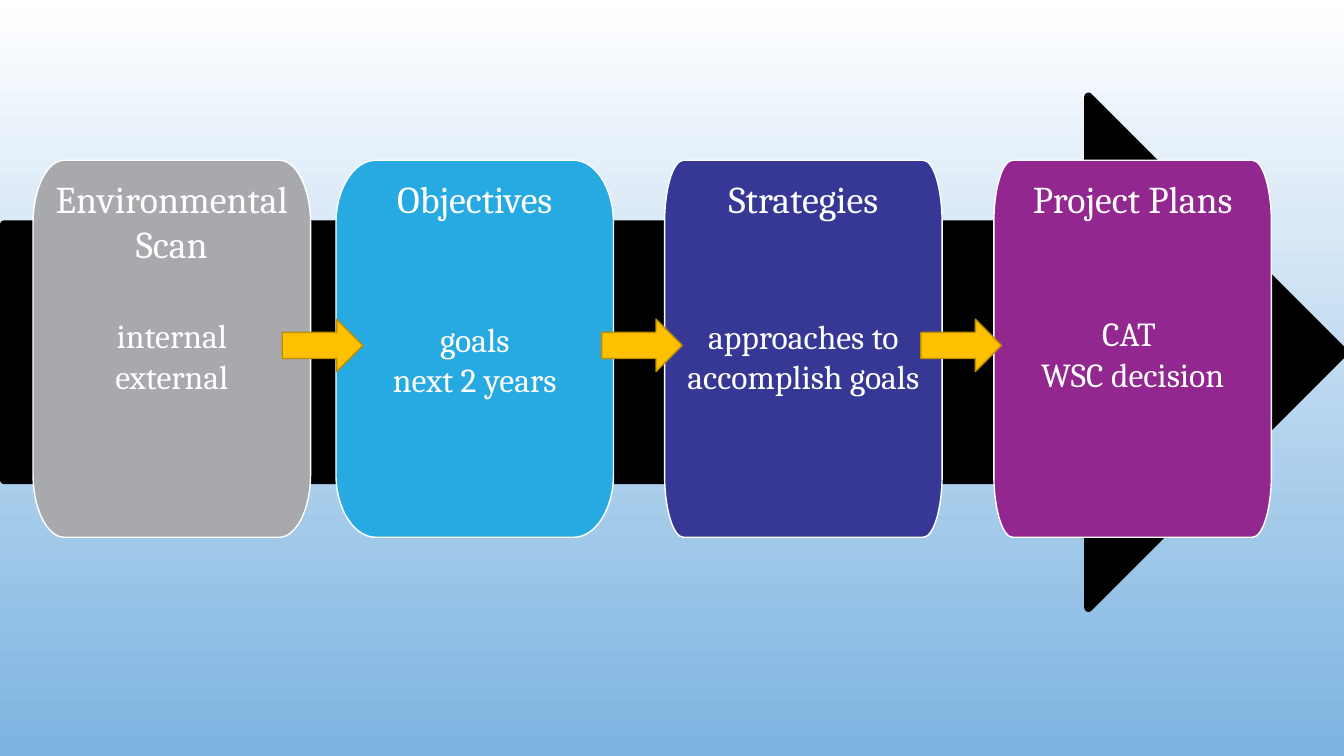
from dataclasses import dataclass

from lxml import etree
from pptx import Presentation
from pptx.dml.color import RGBColor
from pptx.enum.shapes import MSO_SHAPE
from pptx.enum.text import MSO_ANCHOR, PP_ALIGN
from pptx.oxml.ns import qn
from pptx.util import Inches, Pt

RIGHT_ARROW = MSO_SHAPE.RIGHT_ARROW
TOP = MSO_ANCHOR.TOP
CENTER = PP_ALIGN.CENTER
SLIDE_WIDTH = Inches(13.33)
SLIDE_HEIGHT = Inches(7.5)


@dataclass(frozen=True)
class Theme:
    font: str = "Cambria"
    heading_size: int = 27
    detail_size: int = 24
    text: str = "FFFFFF"
    sky_top: str = "FFFFFF"
    sky_bottom: str = "7CB3E1"
    band: str = "000000"
    step: str = "FFC000"
    step_edge: str = "BD8E00"
    card_edge: str = "FFFFFF"
    scan: str = "A7A9AC"
    objectives: str = "27AAE1"
    strategies: str = "373896"
    plans: str = "92278F"


THEME = Theme()

CARD_TOP, CARD_WIDTH, CARD_HEIGHT = 21.2, 20.65, 49.87
CORNER_HEIGHT = 8.3
CORNER_PULL = 0.55
STEP_LEFT, STEP_PITCH = 21, 23.76

STAGES = [
    (2.46, 2.33, THEME.scan, ["Environmental", "Scan"], 35, ["internal", "external"]),
    (25, 2.96, THEME.objectives, ["Objectives"], 70, ["goals", "next 2 years"]),
    (49.45, 1.41, THEME.strategies, ["Strategies"], 68, ["approaches to accomplish goals"]),
    (73.95, 1.41, THEME.plans, ["Project Plans"], 66, ["CAT ", "WSC decision"]),
]


def across(percent):
    return round(SLIDE_WIDTH * percent / 100)


def down(percent):
    return round(SLIDE_HEIGHT * percent / 100)


def paint(shape, fill, edge, edge_width):
    shape.shadow.inherit = False
    shape.fill.solid()
    shape.fill.fore_color.rgb = RGBColor.from_string(fill)
    shape.line.color.rgb = RGBColor.from_string(edge)
    shape.line.width = Pt(edge_width)


def paint_background(slide):
    sky = slide.background.fill
    sky.gradient()
    sky.gradient_angle = 270
    for stop, color in zip(sky.gradient_stops, (THEME.sky_top, THEME.sky_bottom)):
        stop.color.rgb = RGBColor.from_string(color)


def add_arrow(slide, left, top, width, height, fill, edge, edge_width):
    arrow = slide.shapes.add_shape(
        RIGHT_ARROW, across(left), down(top), across(width), down(height)
    )
    paint(arrow, fill, edge, edge_width)


def card_outline(left, corner_width):
    right, bottom = left + CARD_WIDTH, CARD_TOP + CARD_HEIGHT
    near_x, far_x = left + corner_width, right - corner_width
    near_y, far_y = CARD_TOP + CORNER_HEIGHT, bottom - CORNER_HEIGHT
    points = [
        (left, near_y), (near_x, CARD_TOP), (far_x, CARD_TOP), (right, near_y),
        (right, far_y), (far_x, bottom), (near_x, bottom), (left, far_y),
    ]
    return [(across(x), down(y)) for x, y in points]


def pull_toward(point, corner):
    return [round(a + CORNER_PULL * (b - a)) for a, b in zip(point, corner)]


def round_corners(card):
    ends = [(int(pt.get("x")), int(pt.get("y"))) for pt in card._element.iter(qn("a:pt"))]
    edges = list(card._element.iter(qn("a:lnTo")))
    corners = [(0, 0), (card.width, 0), (card.width, card.height), (0, card.height)]
    for index, corner in enumerate(corners):
        start, end = ends[2 * index], ends[2 * index + 1]
        edge = edges[2 * index]
        curve = etree.Element(qn("a:cubicBezTo"))
        for x, y in (pull_toward(start, corner), pull_toward(end, corner), end):
            etree.SubElement(curve, qn("a:pt"), x=str(x), y=str(y))
        edge.getparent().replace(edge, curve)


def write_line(paragraph, text, size, space_before=0):
    paragraph.alignment = CENTER
    paragraph.space_before = Pt(space_before)
    run = paragraph.add_run()
    run.text = text
    run.font.name = THEME.font
    run.font.size = Pt(size)
    run.font.color.rgb = RGBColor.from_string(THEME.text)


def add_card(slide, left, corner_width, color, heading, gap, details):
    start, *rest = card_outline(left, corner_width)
    outline = slide.shapes.build_freeform(*start, scale=1.0)
    outline.add_line_segments([*rest, start], close=True)
    card = outline.convert_to_shape()
    round_corners(card)
    paint(card, color, THEME.card_edge, 1)

    frame = card.text_frame
    frame.word_wrap = True
    frame.vertical_anchor = TOP
    frame.margin_left = frame.margin_right = Inches(0.15)
    frame.margin_top = frame.margin_bottom = Inches(0.15)
    lines = [(text, THEME.heading_size, 0) for text in heading]
    lines += [
        (text, THEME.detail_size, 0 if index else gap)
        for index, text in enumerate(details)
    ]
    for index, (text, size, space) in enumerate(lines):
        paragraph = frame.add_paragraph() if index else frame.paragraphs[0]
        write_line(paragraph, text, size=size, space_before=space)


def main():
    deck = Presentation()
    deck.slide_width = SLIDE_WIDTH
    deck.slide_height = SLIDE_HEIGHT
    slide = deck.slides.add_slide(deck.slide_layouts[6])

    paint_background(slide)
    add_arrow(slide, 0.3, 12.8, 99.7, 67.6, THEME.band, THEME.band, 6)
    for stage in STAGES:
        add_card(slide, *stage)
    for index in range(len(STAGES) - 1):
        step_left = STEP_LEFT + index * STEP_PITCH
        add_arrow(slide, step_left, 42.23, 6, 6.93, THEME.step, THEME.step_edge, 1)

    deck.save("out.pptx")


if __name__ == "__main__":
    main()
